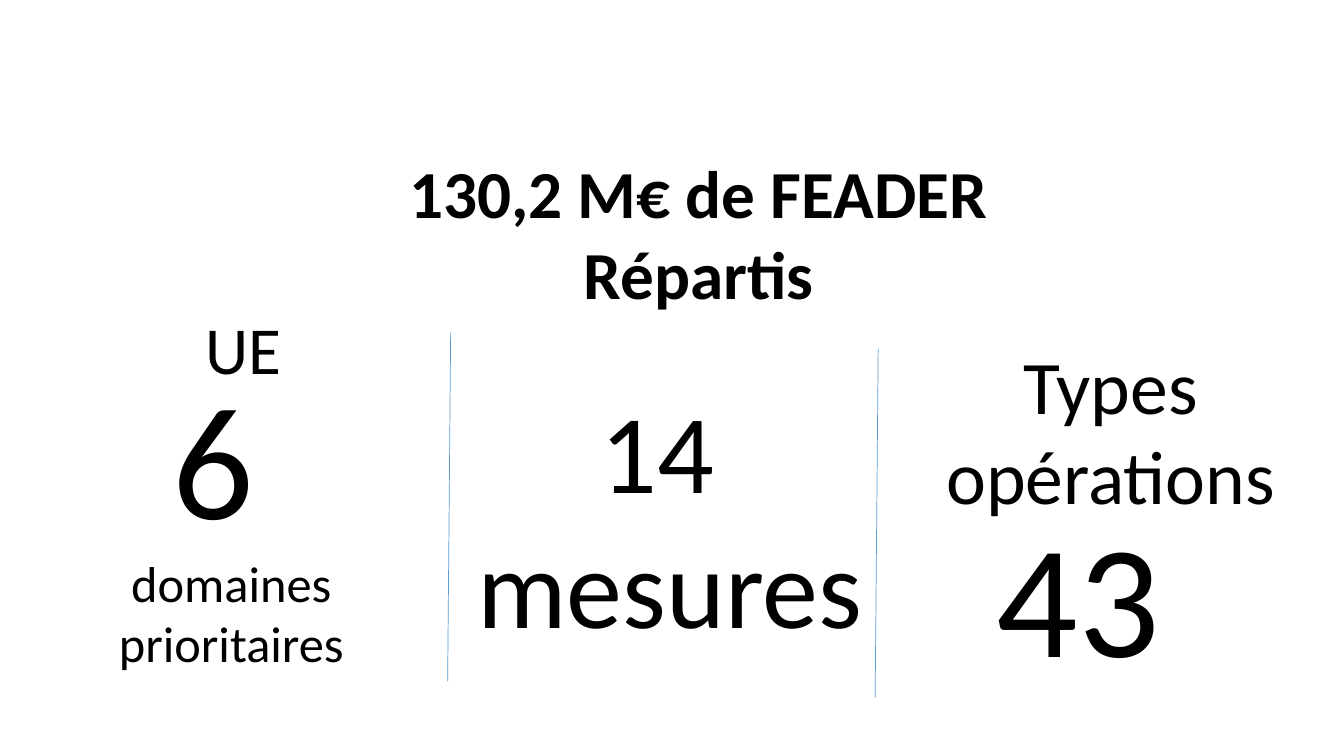
import pptx
import pptx.util
import pptx.dml.color
import pptx.enum.shapes
import pptx.enum.text
from lxml import etree

Inches, Pt = pptx.util.Inches, pptx.util.Pt
ALIGN = pptx.enum.text.PP_ALIGN
BLACK = pptx.dml.color.RGBColor(0x00, 0x00, 0x00)
BLUE = pptx.dml.color.RGBColor(0x5B, 0x9B, 0xD5)
FONT = "Calibri"

TITLE = ((3.93, 1.45, 6, 1.72), False, ALIGN.CENTER,
         [("130,2 M€ de FEADER", 48), ("Répartis", 48)])
FIGURES = [
    ((1.94, 3, 0.96, 0.91), False, ALIGN.LEFT, [("UE", 48)]),
    ((8.87, 3.31, 4.29, 1.92), True, ALIGN.CENTER, [("Types opérations", 54)]),
    ((9.79, 4.88, 1.84, 2.04), False, ALIGN.LEFT, [("43", 115)]),
    ((0.23, 3.51, 4.13, 3.25), True, ALIGN.CENTER,
     [("6 ", 115), ("domaines prioritaires", 36)]),
    ((4.62, 3.74, 4.05, 2.79), False, ALIGN.CENTER,
     [("14 ", 80), ("mesures", 80)]),
]
DIVIDERS = [(4.47, 3.3), (8.71, 3.46)]
DIVIDER_LEAN, DIVIDER_HEIGHT = 0.03, 3.46


def fill_text(sp, wrap, align, lines, bold=False):
    """Write the sized lines into a shape, one paragraph each."""
    tf = sp.text_frame
    tf.word_wrap = wrap
    tf.auto_size = pptx.enum.text.MSO_AUTO_SIZE.SHAPE_TO_FIT_TEXT
    tf.vertical_anchor = pptx.enum.text.MSO_ANCHOR.TOP
    for i, (text, size) in enumerate(lines):
        p = tf.add_paragraph() if i else tf.paragraphs[0]
        p.alignment = align
        r = p.add_run()
        r.text = text
        r.font.name = FONT
        r.font.size = Pt(size)
        r.font.bold = bold
        r.font.color.rgb = BLACK


def add_divider(s, x, y):
    """Draw one slightly leaning column divider."""
    line = s.shapes.add_connector(
        pptx.enum.shapes.MSO_CONNECTOR.STRAIGHT, Inches(x), Inches(y),
        Inches(x - DIVIDER_LEAN), Inches(y + DIVIDER_HEIGHT))
    line.line.color.rgb = BLUE
    line.line.width = Pt(0.5)
    etree.SubElement(line._element.spPr, pptx.oxml.ns.qn("a:effectLst"))


def main():
    """Build and save the slide."""
    prs = pptx.Presentation()
    prs.slide_width, prs.slide_height = Inches(13.33), Inches(7.5)
    s = prs.slides.add_slide(prs.slide_layouts[5])

    box, wrap, align, lines = TITLE
    title = s.shapes.title
    title.left, title.top, title.width, title.height = map(Inches, box)
    fill_text(title, wrap, align, lines, bold=True)

    for box, wrap, align, lines in FIGURES:
        sp = s.shapes.add_textbox(*map(Inches, box))
        fill_text(sp, wrap, align, lines)
    for x, y in DIVIDERS:
        add_divider(s, x, y)

    prs.save("out.pptx")


if __name__ == "__main__":
    main()
